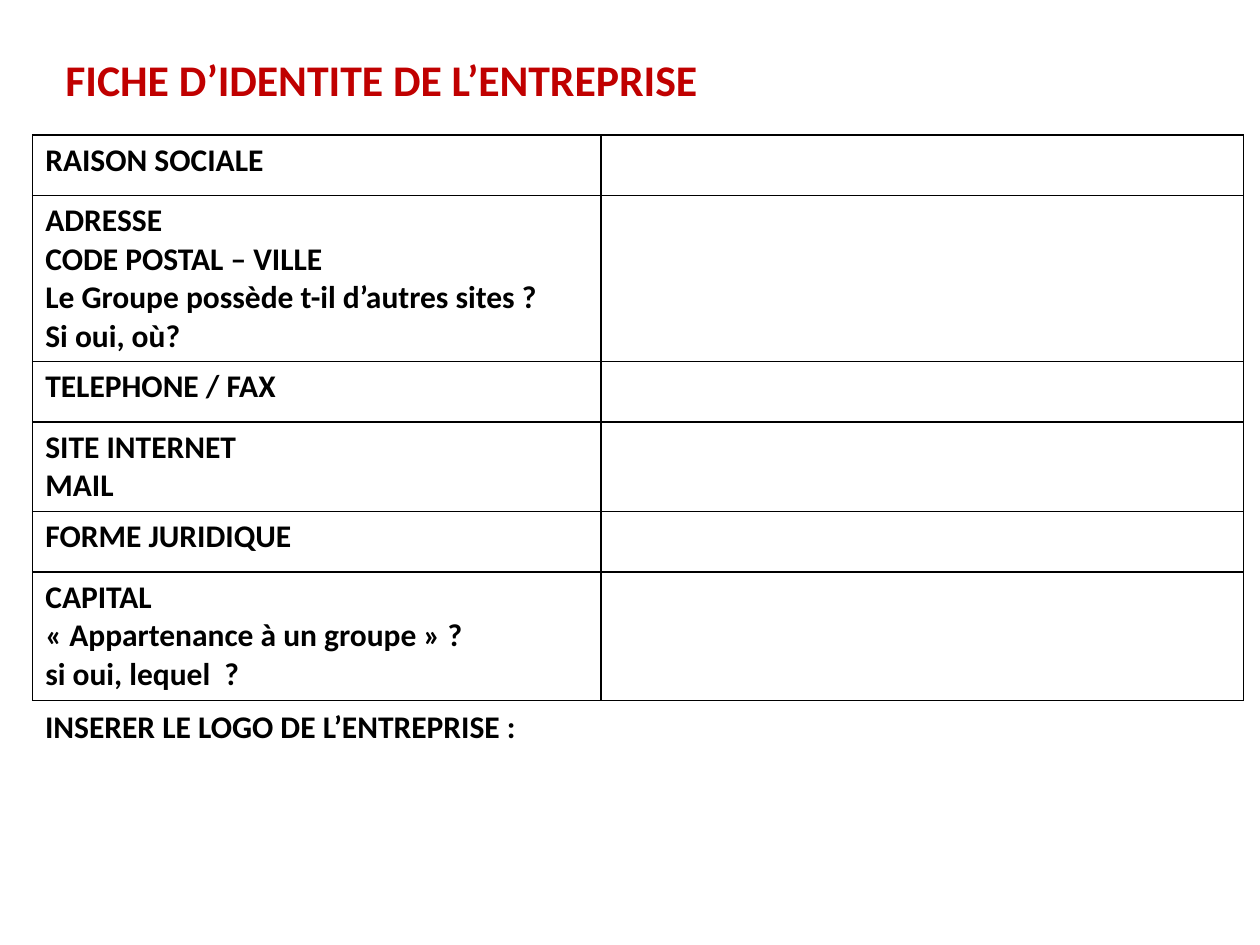
"""Build the company identity sheet slide."""
from dataclasses import dataclass

from lxml import etree
from pptx import Presentation
from pptx import util as u
from pptx.dml.color import RGBColor
from pptx.oxml.ns import qn


@dataclass(frozen=True)
class Theme:
    """Colours, font and type sizes of the slide."""
    font: str = "Calibri"
    title: str = "C00000"
    ink: str = "000000"
    paper: str = "FFFFFF"
    title_size: int = 25
    body_size: int = 18
    border: float = 1


THEME = Theme()
COLUMNS = (11.46, 12.95)
ROWS = (
    (1.22, "RAISON SOCIALE"),
    (3.35, "ADRESSE\nCODE POSTAL – VILLE\nLe Groupe possède t-il d’autres sites ?\nSi oui, où?"),
    (1.22, "TELEPHONE / FAX"),
    (1.8, "SITE INTERNET\nMAIL"),
    (1.22, "FORME JURIDIQUE"),
    (2.59, "CAPITAL\n« Appartenance à un groupe » ?\nsi oui, lequel  ?"),
)


def write(tf, words, size, color):
    """Fill a text frame with bold paragraphs, one for each line."""
    tf.text = words
    for p in tf.paragraphs:
        p.font.name = THEME.font
        p.font.size = u.Pt(size)
        p.font.bold = True
        p.font.color.rgb = RGBColor.from_string(color)


def add_label(slide, box, words, size, color):
    """Place a line of bold text in a box given in centimetres."""
    tf = slide.shapes.add_textbox(*map(u.Cm, box)).text_frame
    tf.word_wrap = True
    write(tf, words, size, color)


def style_cell(cell):
    """Give a cell the paper fill and a border on all four sides."""
    cell.fill.solid()
    cell.fill.fore_color.rgb = RGBColor.from_string(THEME.paper)
    tc_pr = cell.fill._xPr
    for i, side in enumerate(("a:lnL", "a:lnR", "a:lnT", "a:lnB")):
        ln = etree.Element(qn(side), w=str(u.Pt(THEME.border)))
        fill = etree.SubElement(ln, qn("a:solidFill"))
        etree.SubElement(fill, qn("a:srgbClr"), val=THEME.ink)
        tc_pr.insert(i, ln)


def add_identity_table(slide, left, top):
    """Place the two-column form and return its bottom edge."""
    height = sum(h for h, _ in ROWS)
    box = (left, top, sum(COLUMNS), height)
    table = slide.shapes.add_table(len(ROWS), len(COLUMNS), *map(u.Cm, box)).table
    table.first_row = table.horz_banding = False
    for column, width in zip(table.columns, COLUMNS):
        column.width = u.Cm(width)
    for row, (row_height, words) in zip(table.rows, ROWS):
        row.height = u.Cm(row_height)
        for cell, entry in zip(row.cells, (words, "")):
            write(cell.text_frame, entry, THEME.body_size, THEME.ink)
            style_cell(cell)
    return top + height


def main():
    """Assemble and save the slide."""
    prs = Presentation()
    prs.slide_width, prs.slide_height = u.Cm(25.4), u.Cm(19.05)
    slide = prs.slides.add_slide(prs.slide_layouts[6])
    add_label(slide, (1.07, 0.94, 15.42, 1.3), "FICHE D’IDENTITE DE L’ENTREPRISE",
              THEME.title_size, THEME.title)
    left = 0.66
    bottom = add_identity_table(slide, left, 2.72)
    add_label(slide, (left, bottom, 12.22, 1.02), "INSERER LE LOGO DE L’ENTREPRISE :",
              THEME.body_size, THEME.ink)
    prs.save("out.pptx")


if __name__ == "__main__":
    main()
